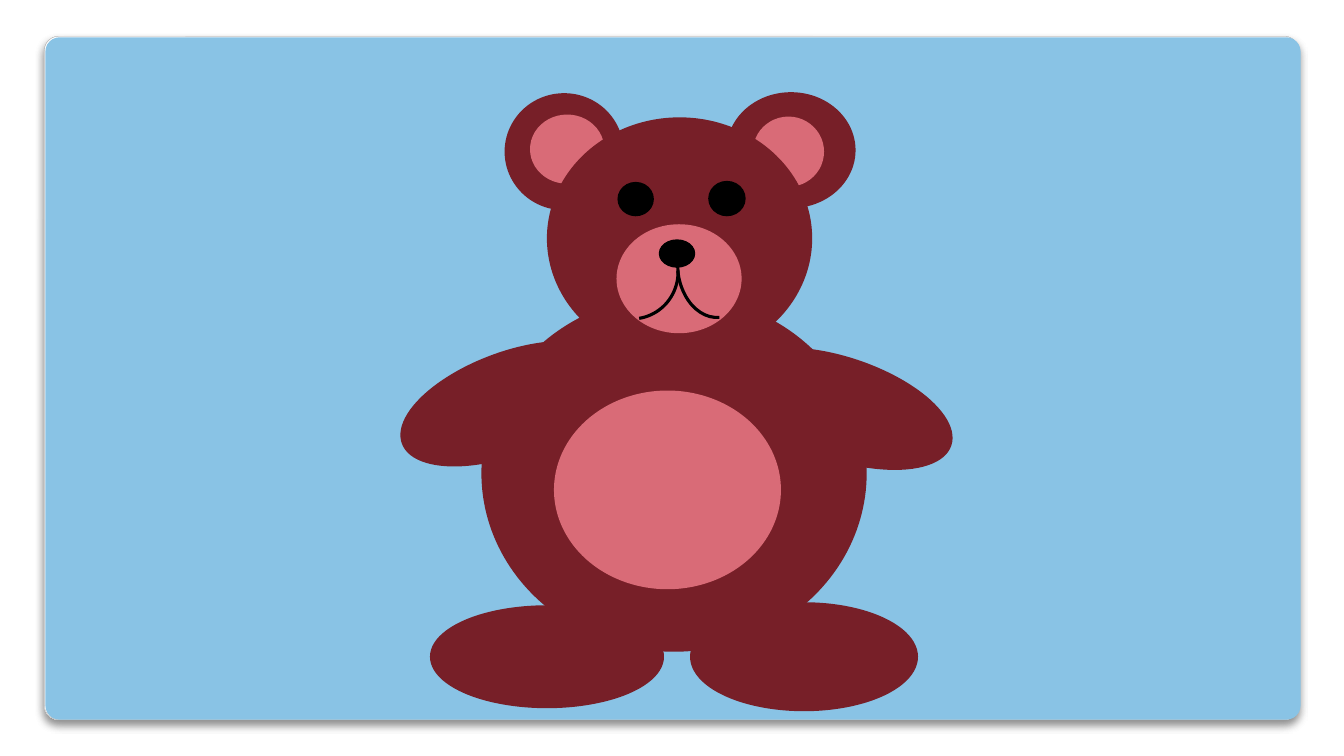
from lxml.etree import SubElement
from pptx import Presentation
from pptx.dml.color import RGBColor
from pptx.enum.shapes import MSO_SHAPE as Preset
from pptx.oxml.ns import qn
from pptx.util import Inches, Pt

WHITE = RGBColor(0xFF, 0xFF, 0xFF)
SILVER = RGBColor(0xDA, 0xDA, 0xDA)
GRAY = RGBColor(0xA4, 0xA4, 0xA4)
SKY = RGBColor(0x89, 0xC3, 0xE5)
FUR = RGBColor(0x77, 0x1F, 0x28)
PINK = RGBColor(0xD9, 0x6B, 0x77)
BLACK = RGBColor(0, 0, 0)


class BearSlide:
    """Draws the bear and its backdrop on one slide."""

    corner = 0.021
    outline = 2.25

    def __init__(self, page):
        self.page = page

    def add(self, preset, bounds, rotation=0):
        shape = self.page.shapes.add_shape(preset, *map(Inches, bounds))
        shape.shadow.inherit = False
        shape.rotation = rotation
        return shape

    def stroke(self, shape, color, width):
        shape.line.color.rgb = color
        shape.line.width = Pt(width)

    def card(self, bounds):
        card = self.add(Preset.ROUNDED_RECTANGLE, bounds)
        card.adjustments[0] = self.corner
        return card

    def frame(self, *bounds):
        frame = self.card(bounds)
        frame.fill.gradient()
        frame.fill.gradient_angle = 270
        stops = zip(frame.fill.gradient_stops, (0.98, 1), (WHITE, SILVER))
        for stop, position, color in stops:
            stop.position = position
            stop.color.rgb = color
        self.stroke(frame, GRAY, 0.16)
        effects = frame._element.spPr.find(qn("a:effectLst"))
        shadow = SubElement(effects, qn("a:outerShdw"), blurRad=str(Pt(6)),
                            dist=str(Pt(4)), dir="5400000", rotWithShape="0")
        black = SubElement(shadow, qn("a:srgbClr"), val=str(BLACK))
        SubElement(black, qn("a:alpha"), val="25000")

    def backdrop(self, *bounds):
        sky = self.card(bounds)
        sky.fill.solid()
        sky.fill.fore_color.rgb = SKY
        sky.line.fill.background()

    def ellipse(self, color, *bounds, rotation=0, width=outline):
        ellipse = self.add(Preset.OVAL, bounds, rotation)
        ellipse.fill.solid()
        ellipse.fill.fore_color.rgb = color
        self.stroke(ellipse, color, width)

    def ear(self, outer, inner):
        self.ellipse(FUR, *outer)
        self.ellipse(PINK, *inner, width=3.35)

    def arc(self, *bounds, rotation):
        arc = self.add(Preset.ARC, bounds, rotation)
        arc.fill.background()
        self.stroke(arc, BLACK, self.outline)


def main():
    deck = Presentation()
    deck.slide_width, deck.slide_height = Inches(13.33), Inches(7.5)
    bear = BearSlide(deck.slides.add_slide(deck.slide_layouts[6]))

    for _ in range(2):
        bear.frame(0.44, 0.36, 12.44, 6.78)
    bear.backdrop(0.45, 0.37, 12.45, 6.77)

    bear.ear((5.02, 0.94, 1.15, 1.13), (5.28, 1.16, 0.69, 0.64))
    bear.ear((7.22, 0.93, 1.25, 1.12), (7.49, 1.18, 0.66, 0.65))

    right_foot, left_foot = (6.86, 5.99, 2.23, 1.05), (4.28, 6.02, 2.29, 0.99)
    body, head = (4.79, 2.94, 3.79, 3.51), (5.44, 1.18, 2.6, 2.37)
    for part in (right_foot, left_foot, body, head):
        bear.ellipse(FUR, *part)
    bear.ellipse(FUR, 3.93, 3.51, 2.23, 0.99, rotation=339.4)

    muzzle, nose = (6.13, 2.24, 1.21, 1.05), (6.55, 2.39, 0.33, 0.25)
    belly, left_eye = (5.51, 3.89, 2.22, 1.94), (6.14, 1.82, 0.33, 0.31)
    bear.ellipse(PINK, *muzzle)
    bear.ellipse(BLACK, *nose)
    bear.ellipse(PINK, *belly)
    bear.ellipse(BLACK, *left_eye)
    bear.arc(6.72, 2.15, 0.73, 1, rotation=174.3)
    bear.ellipse(FUR, 7.21, 3.56, 2.27, 0.99, rotation=18.5)
    right_eye = (7.04, 1.81, 0.34, 0.32)
    bear.ellipse(BLACK, *right_eye)
    bear.arc(5.8, 2.24, 0.93, 0.92, rotation=80.7)

    deck.save("out.pptx")


if __name__ == "__main__":
    main()
